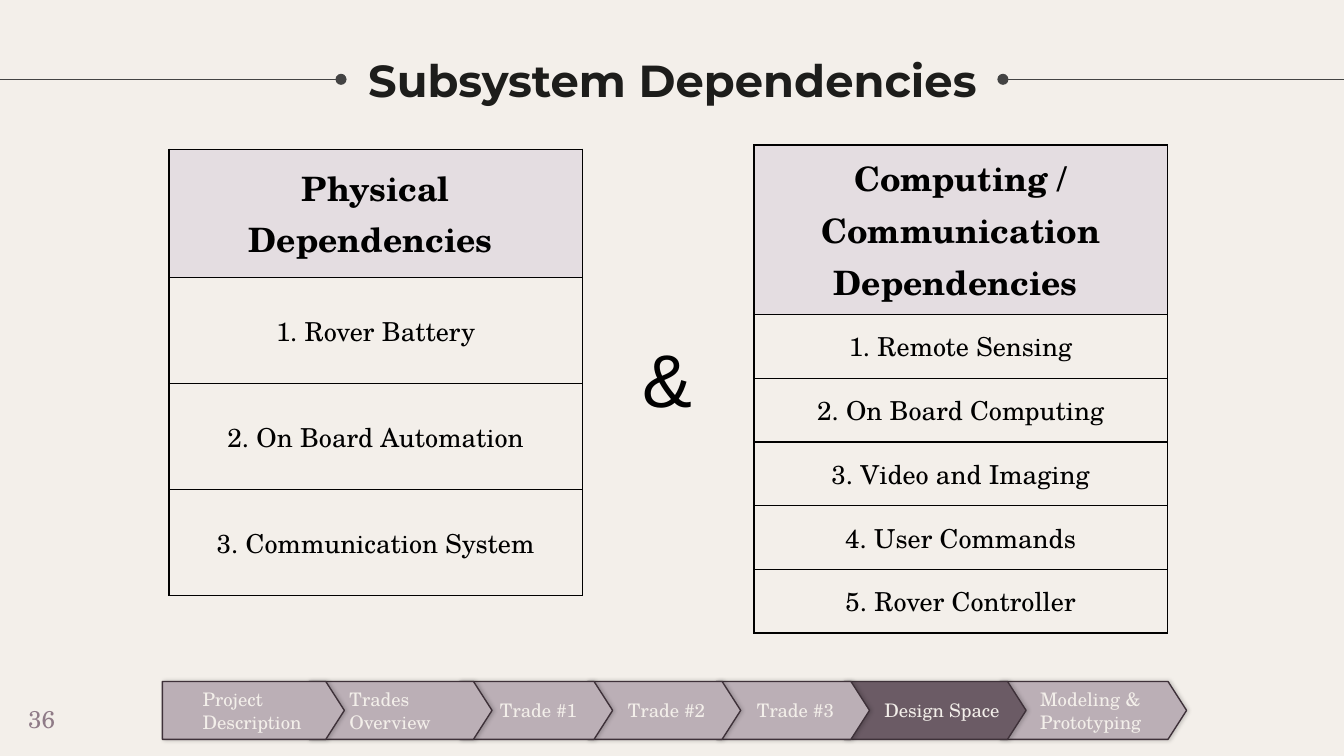
from lxml import etree
from pptx import Presentation
from pptx.dml.color import RGBColor
from pptx.enum.shapes import MSO_CONNECTOR, MSO_SHAPE
from pptx.enum.text import MSO_ANCHOR, PP_ALIGN
from pptx.oxml import parse_xml
from pptx.oxml.ns import nsdecls, qn
from pptx.util import Pt

CENTER, LEFT = PP_ALIGN.CENTER, PP_ALIGN.LEFT
MIDDLE, TOP = MSO_ANCHOR.MIDDLE, MSO_ANCHOR.TOP
STRAIGHT = MSO_CONNECTOR.STRAIGHT
PENTAGON = MSO_SHAPE.PENTAGON

SERIF = "TeX Gyre Schola"
COLORS = {
    "background": "F3EFEA",
    "title": "1D1D1B",
    "rule": "434343",
    "number": "8F7B87",
    "step": "BBAFB6",
    "current": "6B5B65",
    "outline": "3E3139",
    "header": "E4DDE1",
    "black": "000000",
}
PHYSICAL = [
    "Physical Dependencies ",
    "1. Rover Battery",
    "2. On Board Automation",
    "3. Communication System",
]
COMPUTING = [
    "Computing / Communication Dependencies ",
    "1. Remote Sensing",
    "2. On Board Computing",
    "3. Video and Imaging",
    "4. User Commands",
    "5. Rover Controller",
]
STEPS = [
    ("Project Description", 87, 97.5),
    ("Trades Overview", 165.6, 98),
    ("Trade #1", 246.2, 82),
    ("Trade #2", 314.8, 82),
    ("Trade #3", 383.8, 82),
    ("Design Space", 452.2, 97.5),
    ("Modeling & Prototyping", 535.7, 100),
]
CURRENT_STEP = "Design Space"


def rgb(name):
    return RGBColor.from_string(COLORS[name])


def set_text(tf, text, size, color, font=SERIF, bold=False, align=CENTER):
    tf.text = text
    p = tf.paragraphs[0]
    p.alignment = align
    r = p.runs[0]
    r.font.name = font
    r.font.size = Pt(size)
    r.font.bold = bold
    r.font.color.rgb = rgb(color)


def set_frame(tf, anchor, left=7.2, top=7.2, right=7.2, bottom=7.2):
    tf.word_wrap = True
    tf.vertical_anchor = anchor
    tf.margin_left, tf.margin_top = Pt(left), Pt(top)
    tf.margin_right, tf.margin_bottom = Pt(right), Pt(bottom)


def add_title(slide, text):
    sp = slide.shapes.title
    sp.left, sp.top, sp.width, sp.height = Pt(182.7), Pt(8.6), Pt(355), Pt(67.7)
    set_frame(sp.text_frame, MIDDLE)
    set_text(sp.text_frame, text, 24, "title", "Montserrat", True)


def add_rule(slide, start, end, y):
    line = slide.shapes.add_connector(STRAIGHT, Pt(start), Pt(y), Pt(end), Pt(y))
    line.line.color.rgb = rgb("rule")
    line.line.width = Pt(0.75)
    etree.SubElement(line.line._get_or_add_ln(), qn("a:headEnd"), type="oval")
    etree.SubElement(line._element.spPr, qn("a:effectLst"))


def add_label(slide, text, box, size, color, font, align, inset):
    sp = slide.shapes.add_textbox(*map(Pt, box))
    set_frame(sp.text_frame, TOP, top=inset, bottom=inset)
    set_text(sp.text_frame, text, size, color, font, align=align)


def add_step(slide, text, left, width):
    sp = slide.shapes.add_shape(PENTAGON, Pt(left), Pt(365.1), Pt(width), Pt(31))
    sp.adjustments[0] = 0.32
    sp.fill.solid()
    sp.fill.fore_color.rgb = rgb("current" if text == CURRENT_STEP else "step")
    sp.line.color.rgb = rgb("outline")
    sp.line.width = Pt(0.75)
    sp.shadow.inherit = False
    sp._element.spPr.find(qn("a:effectLst")).append(parse_xml(
        f'<a:outerShdw {nsdecls("a")} blurRad="{Pt(2.2)}" dist="{Pt(0.8)}" dir="0">'
        f'<a:srgbClr val="{COLORS["black"]}"><a:alpha val="20000"/></a:srgbClr>'
        '</a:outerShdw>'))
    set_frame(sp.text_frame, MIDDLE, left=21.6, top=0, right=0, bottom=0)
    set_text(sp.text_frame, text, 10, "background", align=LEFT)


def add_borders(cell):
    tcPr = cell._tc.get_or_add_tcPr()
    for i, side in enumerate(("lnL", "lnR", "lnT", "lnB")):
        tcPr.insert(i, parse_xml(
            f'<a:{side} {nsdecls("a")} w="{Pt(0.75)}"><a:solidFill>'
            f'<a:srgbClr val="{COLORS["black"]}"/></a:solidFill></a:{side}>'))


def add_list_table(slide, items, left, top, header_height, row_height):
    height = header_height + row_height * (len(items) - 1)
    table = slide.shapes.add_table(
        len(items), 1, Pt(left), Pt(top), Pt(221.5), Pt(height)).table
    table.horz_banding = False
    for i, text in enumerate(items):
        header = i == 0
        table.rows[i].height = Pt(header_height if header else row_height)
        cell = table.cell(i, 0)
        cell.vertical_anchor = MIDDLE
        set_text(cell.text_frame, text, 18 if header else 14, "black", bold=header)
        if header:
            cell.fill.solid()
            cell.fill.fore_color.rgb = rgb("header")
        else:
            cell.fill.background()
        add_borders(cell)


def main():
    prs = Presentation()
    prs.slide_width, prs.slide_height = Pt(720), Pt(405)
    slide = prs.slides.add_slide(prs.slide_layouts[5])
    slide.background.fill.solid()
    slide.background.fill.fore_color.rgb = rgb("background")

    add_rule(slide, 182.7, -2, 42.5)
    add_rule(slide, 537.3, 720.7, 42.5)
    add_title(slide, "Subsystem Dependencies")
    add_label(slide, "36", (0.7, 370, 43.2, 31), 13, "number", SERIF, CENTER, 7.2)
    for step in reversed(STEPS):
        add_step(slide, *step)
    add_list_table(slide, PHYSICAL, 90.5, 80, 68.8, 56.8)
    add_list_table(slide, COMPUTING, 403.9, 77.7, 90.8, 34.15)
    add_label(slide, "&", (337, 175, 46.8, 55.4), 40, "black", "Arial", LEFT, 3.6)
    prs.save("out.pptx")


if __name__ == "__main__":
    main()
